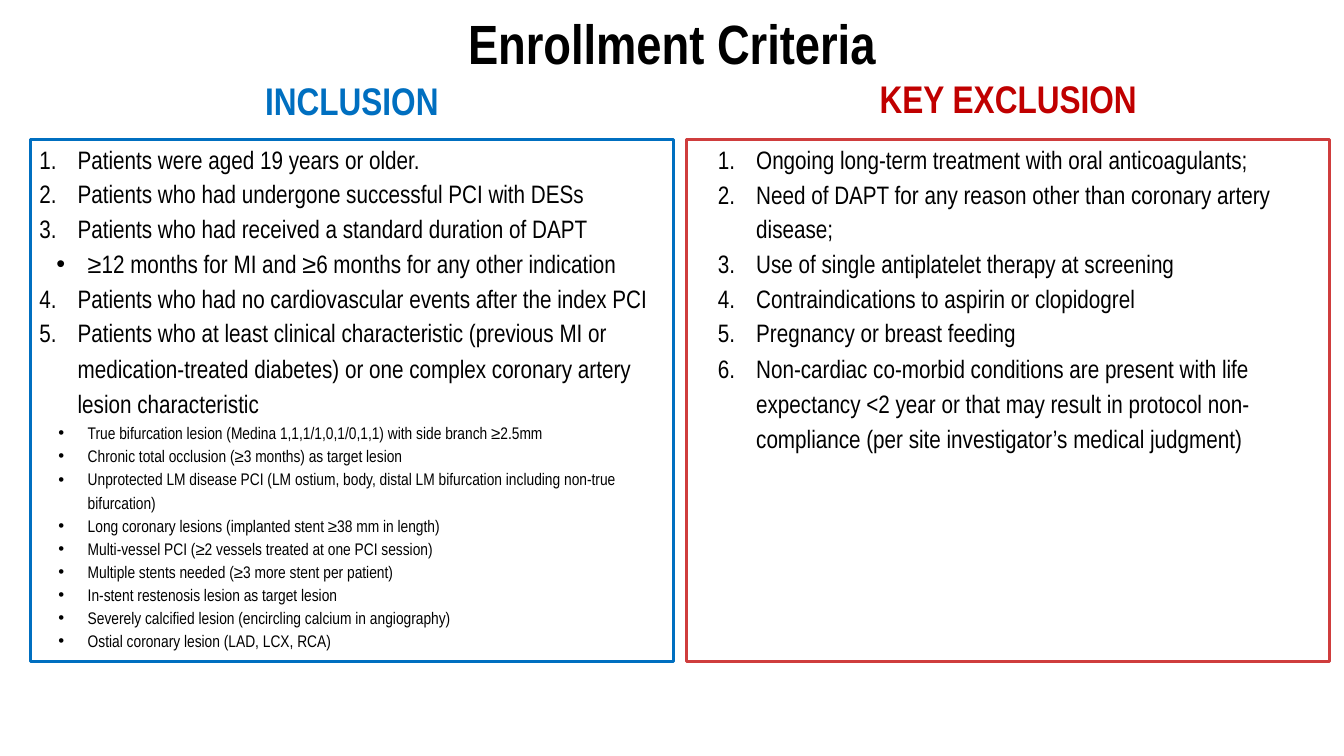
"""Build the Enrollment Criteria slide with two bordered criteria panels."""
from dataclasses import dataclass

from lxml import etree
from pptx import Presentation
from pptx.dml.color import RGBColor
from pptx.enum.shapes import MSO_SHAPE
from pptx.enum.text import MSO_ANCHOR, PP_ALIGN
from pptx.oxml.ns import qn
from pptx.util import Inches, Pt

RECT = MSO_SHAPE.RECTANGLE
TOP = MSO_ANCHOR.TOP
LEFT, CENTER = PP_ALIGN.LEFT, PP_ALIGN.CENTER

TITLE = "Enrollment Criteria"

# kind, space before in points, line spacing, text
INCLUDE = [
    ("num", 0, 1, "Patients were aged 19 years or older."),
    ("num", 3.2, 1, "Patients who had undergone successful PCI with DESs"),
    ("num", 3.2, 1, "Patients who had received a standard duration of DAPT"),
    ("sub", 3.2, 1, "≥12 months for MI and ≥6 months for any other indication"),
    ("num", 3.2, 1, "Patients who had no cardiovascular events after the index PCI"),
    ("num", 3.2, 1, "Patients who at least clinical characteristic (previous MI or"),
    ("more", 0.8, 1.15, "medication-treated diabetes) or one complex coronary artery lesion characteristic"),
    ("small", 3.1, 1, "True bifurcation lesion (Medina 1,1,1/1,0,1/0,1,1) with side branch ≥2.5mm"),
    ("small", 2.1, 1, "Chronic total occlusion (≥3 months) as target lesion"),
    ("small", 0, 1.15, "Unprotected LM disease PCI (LM ostium, body, distal LM bifurcation "
                       "including non-true bifurcation)"),
    ("small", 2.1, 1, "Long coronary lesions (implanted stent ≥38 mm in length)"),
    ("small", 2.1, 1, "Multi-vessel PCI (≥2 vessels treated at one PCI session)"),
    ("small", 2.1, 1, "Multiple stents needed (≥3 more stent per patient)"),
    ("small", 2.1, 1, "In-stent restenosis lesion as target lesion"),
    ("small", 2.1, 1, "Severely calcified lesion (encircling calcium in angiography)"),
    ("small", 2.1, 1, "Ostial coronary lesion (LAD, LCX, RCA)"),
]
EXCLUDE = [
    ("num", 0, 1, "Ongoing long-term treatment with oral anticoagulants;"),
    ("num", 0, 1.15, "Need of DAPT for any reason other than coronary artery disease;"),
    ("num", 3.2, 1, "Use of single antiplatelet therapy at screening"),
    ("num", 3.2, 1, "Contraindications to aspirin or clopidogrel"),
    ("num", 3.2, 1, "Pregnancy or breast feeding"),
    ("num", 0.8, 1.15, "Non-cardiac co-morbid conditions are present with life expectancy "
                       "<2 year or that may result in protocol non-compliance "
                       "(per site investigator’s medical judgment)"),
]


@dataclass(frozen=True)
class Theme:
    """Colours and type of the slide."""
    font: str = "Arial Narrow"
    black: str = "000000"
    blue: str = "006FC0"
    red: str = "C00000"
    rose: str = "CF3D3D"
    title: float = 39.5
    head: float = 27.5
    body: float = 18
    small: float = 12


LOOK = Theme()

# size, left margin, hanging indent, marker
KINDS = {
    "num": (LOOK.body, 0.38, 0.38, "number"),
    "sub": (LOOK.body, 0.48, 0.31, "dot"),
    "more": (LOOK.body, 0.38, 0, None),
    "small": (LOOK.small, 0.48, 0.29, "dot"),
}

WIDE, TALL = 13.33, 7.5
BOX_Y, BOX_W, BOX_H = 1.38, 6.38, 5.18

# heading, its top and width, text colour, line colour, box left, insets, list shift, items
PANELS = [
    ("INCLUSION", 0.74, 1.79, LOOK.blue, LOOK.blue, 0.3, (0.09, 0.1), 0, INCLUDE),
    ("KEY EXCLUSION", 0.72, 2.63, LOOK.red, LOOK.rose, 6.81, (0, 0), 0.31, EXCLUDE),
]


def style(par, size, color, bold=False):
    """Set the type of every run in a paragraph."""
    for run in par.runs:
        run.font.name = LOOK.font
        run.font.size = Pt(size)
        run.font.bold = bold
        run.font.color.rgb = RGBColor.from_string(color)


def pad(frame, left, top, right):
    """Set the insets of a text frame."""
    frame.margin_left, frame.margin_top = Inches(left), Inches(top)
    frame.margin_right, frame.margin_bottom = Inches(right), 0
    frame.vertical_anchor = TOP


def label(slide, text, mid, top, size, color):
    """Add a bold line centred on mid, given as centre and width."""
    center, width = mid
    box = slide.shapes.add_textbox(Inches(center - width / 2), Inches(top),
                                   Inches(width), Inches(size * 0.0175))
    frame = box.text_frame
    pad(frame, 0, 0.02, 0)
    frame.word_wrap = False
    frame.text = text
    par = frame.paragraphs[0]
    par.alignment = CENTER
    style(par, size, color, True)


def mark(par, left, hang, sign, count):
    """Set the indent and the list marker of a paragraph."""
    props = par._p.get_or_add_pPr()
    props.set("marL", str(Inches(left)))
    props.set("indent", str(-Inches(hang)))
    if sign == "number":
        etree.SubElement(props, qn("a:buAutoNum"), type="arabicPeriod", startAt=str(count))
    elif sign == "dot":
        etree.SubElement(props, qn("a:buFont"), typeface="Arial")
        etree.SubElement(props, qn("a:buChar"), char="•")
    else:
        etree.SubElement(props, qn("a:buNone"))


def panel(slide, left, line, sides, shift, items):
    """Add a bordered box that holds a list."""
    box = slide.shapes.add_shape(RECT, Inches(left), Inches(BOX_Y), Inches(BOX_W), Inches(BOX_H))
    box.shadow.inherit = False
    box.fill.background()
    box.line.color.rgb = RGBColor.from_string(line)
    box.line.width = Pt(2)
    frame = box.text_frame
    frame.word_wrap = True
    pad(frame, sides[0], 0.05, sides[1])
    frame.text = "\n".join(text for *_, text in items)
    count = 0
    for par, (kind, before, lines, _) in zip(frame.paragraphs, items):
        size, margin, hang, sign = KINDS[kind]
        count += sign == "number"
        par.alignment = LEFT
        par.line_spacing = float(lines)
        par.space_before = Pt(before)
        mark(par, margin + shift, hang, sign, count)
        style(par, size, LOOK.black)


def main():
    """Build and save the slide."""
    deck = Presentation()
    deck.slide_width, deck.slide_height = Inches(WIDE), Inches(TALL)
    slide = deck.slides.add_slide(deck.slide_layouts[6])
    label(slide, TITLE, (WIDE / 2, 4.12), 0.07, LOOK.title, LOOK.black)
    for head, top, width, color, line, left, sides, shift, items in PANELS:
        label(slide, head, (left + BOX_W / 2, width), top, LOOK.head, color)
        panel(slide, left, line, sides, shift, items)
    deck.save("out.pptx")


if __name__ == "__main__":
    main()
